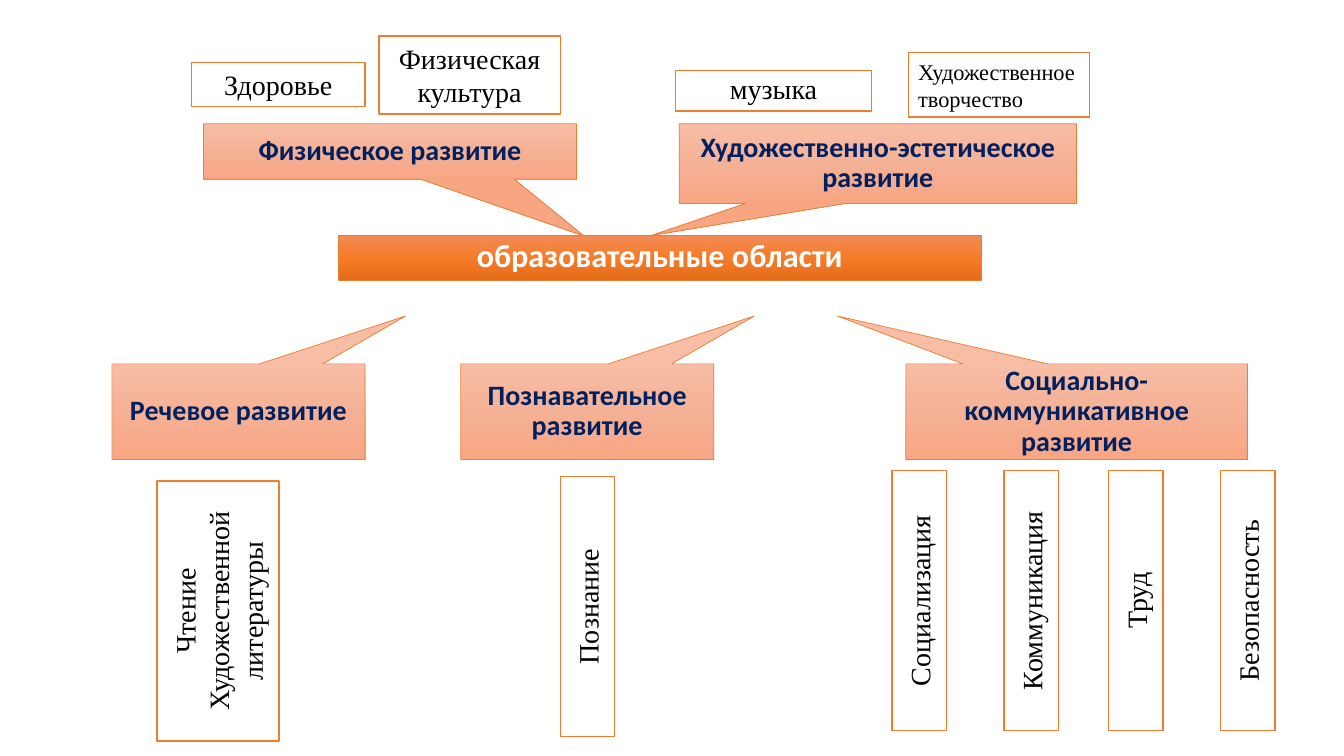
from copy import deepcopy

from pptx import Presentation
from pptx.dml.color import RGBColor
from pptx.enum.shapes import MSO_SHAPE
from pptx.enum.text import MSO_ANCHOR, PP_ALIGN
from pptx.oxml.ns import qn
from pptx.util import Cm, Pt

RECT, CALLOUT = MSO_SHAPE.RECTANGLE, MSO_SHAPE.RECTANGULAR_CALLOUT
TOP, MIDDLE = MSO_ANCHOR.TOP, MSO_ANCHOR.MIDDLE
LEFT, CENTER = PP_ALIGN.LEFT, PP_ALIGN.CENTER

WHITE = RGBColor(0xFF, 0xFF, 0xFF)
BLACK = RGBColor(0x00, 0x00, 0x00)
NAVY = RGBColor(0x00, 0x20, 0x60)
ORANGE = RGBColor(0xED, 0x7D, 0x31)
BRIGHT = [RGBColor(0xF1, 0x8C, 0x57), RGBColor(0xF6, 0x7B, 0x28), RGBColor(0xE5, 0x6C, 0x19)]
PEACH = [RGBColor(0xF7, 0xBD, 0xA5), RGBColor(0xF5, 0xB1, 0x96), RGBColor(0xF8, 0xA5, 0x82)]

TITLE_FONT = {"name": "Calibri", "size": Pt(23), "bold": True}
AREA_FONT = {"name": "Calibri", "size": Pt(20), "bold": True}
TOPIC_FONT = {"name": "Times New Roman", "size": Pt(20), "bold": False}


class Diagram:
    def __init__(self, prs):
        self.slide = prs.slides.add_slide(prs.slide_layouts[6])

    def box(self, kind, at, text, font, color, line, anchor=MIDDLE, align=CENTER, spacing=1.0):
        s = self.slide.shapes.add_shape(kind, *map(Cm, at))
        s.shadow.inherit = False
        s.line.color.rgb = ORANGE
        s.line.width = Pt(line)
        tf = s.text_frame
        tf.word_wrap = True
        tf.vertical_anchor = anchor
        p = tf.paragraphs[0]
        p.alignment = align
        p.line_spacing = spacing
        r = p.add_run()
        r.text = text
        for name, value in font.items():
            setattr(r.font, name, value)
        r.font.color.rgb = color
        return s

    def gradient(self, s, colors):
        s.fill.gradient()
        s.fill.gradient_angle = 270
        stops = s._element.spPr.find(qn("a:gradFill")).find(qn("a:gsLst"))
        stops.insert(1, deepcopy(stops[0]))  # a new gradient has two stops
        for i, (stop, color) in enumerate(zip(s.fill.gradient_stops, colors)):
            stop.color.rgb = color
            stop.position = i / 2

    def title(self, at, text):
        s = self.box(RECT, at, text, TITLE_FONT, WHITE, 0.5, anchor=TOP, spacing=0.9)
        self.gradient(s, BRIGHT)

    def area(self, at, tip, text):
        s = self.box(CALLOUT, at, text, AREA_FONT, NAVY, 0.5, spacing=0.9)
        s.adjustments[0], s.adjustments[1] = tip
        self.gradient(s, PEACH)

    def topic(self, at, text, size=20, align=CENTER, spacing=1.0, upright=False):
        font = {**TOPIC_FONT, "size": Pt(size)}
        s = self.box(RECT, at, text, font, BLACK, 1, align=align, spacing=spacing)
        s.fill.solid()
        s.fill.fore_color.rgb = WHITE
        if upright:
            s.text_frame._txBody.bodyPr.set("vert", "vert270")


def main():
    prs = Presentation()
    prs.slide_width, prs.slide_height = Cm(33.87), Cm(19.05)
    d = Diagram(prs)

    # Central bar
    d.title((8.53, 5.92, 16.21, 1.14), "образовательные области")

    # Five areas, each pointing to the bar
    for at, tip, text in [
        ((5.13, 3.12, 9.4, 1.4), (0.52, 1.52), "Физическое развитие"),
        ((17.12, 3.12, 10.01, 2.01), (-0.57, 0.9), "Художественно-эстетическое развитие"),
        ((2.82, 9.17, 6.38, 2.41), (0.66, -1), "Речевое развитие"),
        ((11.61, 9.17, 6.38, 2.41), (0.66, -1), "Познавательное развитие"),
        ((22.83, 9.17, 8.61, 2.41), (-0.7, -1), "Социально-коммуникативное развитие"),
    ]:
        d.area(at, tip, text)

    # Topics above the upper areas
    d.topic((4.83, 1.57, 4.37, 1.12), "Здоровье")
    d.topic((9.55, 0.91, 4.57, 1.96), "Физическая культура")
    d.topic((17.02, 1.78, 4.95, 1.02), "музыка", spacing=0.9)
    d.topic((22.89, 1.32, 4.57, 1.63), "Художественное творчество", size=16, align=LEFT)

    # Upright topics below the lower areas
    for x, y, width, text in [
        (3.96, 12.12, 3.07, "Чтение Художественной литературы"),
        (14.12, 12.01, 1.37, "Познание"),
        (22.48, 11.86, 1.37, "Социализация"),
        (25.3, 11.86, 1.37, "Коммуникация"),
        (27.94, 11.86, 1.37, "Труд"),
        (30.76, 11.86, 1.37, "Безопасность"),
    ]:
        d.topic((x, y, width, 6.55), text, upright=True)

    prs.save("out.pptx")


if __name__ == "__main__":
    main()
